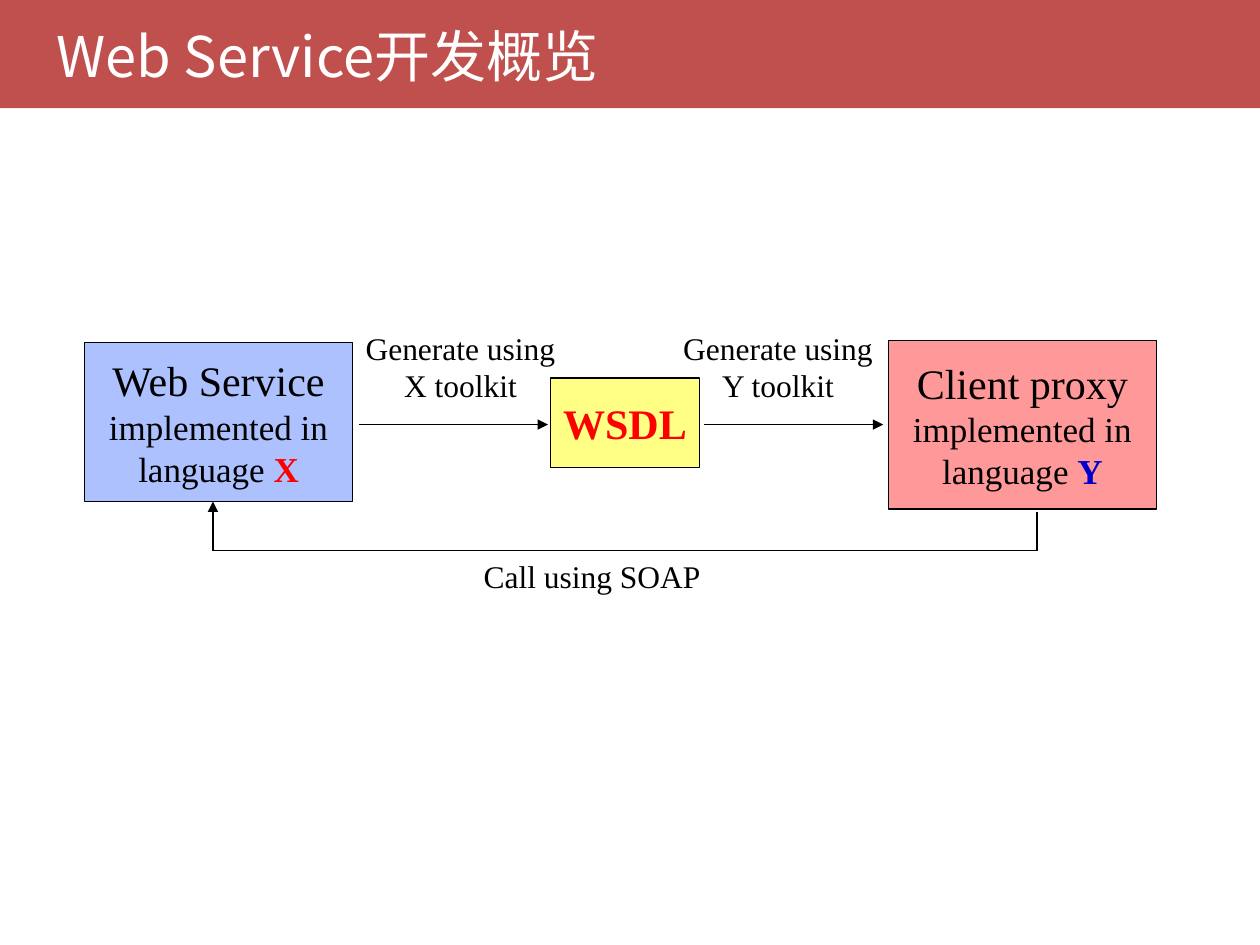
from lxml import etree
from pptx import Presentation
from pptx.dml.color import RGBColor
from pptx.enum.shapes import MSO_CONNECTOR, MSO_SHAPE
from pptx.enum.text import MSO_ANCHOR, PP_ALIGN
from pptx.oxml.ns import qn
from pptx.util import Inches, Pt

RECTANGLE, STRAIGHT = MSO_SHAPE.RECTANGLE, MSO_CONNECTOR.STRAIGHT
MIDDLE, TOP = MSO_ANCHOR.MIDDLE, MSO_ANCHOR.TOP
LEFT, CENTER = PP_ALIGN.LEFT, PP_ALIGN.CENTER
WIDTH, HEIGHT, HEADER_HEIGHT = 10, 7.5, 0.86
TITLE_FONT, BODY_FONT = "Noto Sans CJK SC", "Times New Roman"
BLACK, WHITE, RED, BLUE, HEADER_RED = "000000", "FFFFFF", "FF0000", "0000CC", "C0504D"

# Content: a run is (text, size, colour, bold)
TITLE = [[("Web Service开发概览", 32, WHITE, False)]]


def component(name, language, colour):
    return [[(name, 24, BLACK, False)],
            [("implemented in", 20, BLACK, False)],
            [("language ", 20, BLACK, False), (language, 20, colour, True)]]


# (left, top, width, height), fill, opacity in percent, paragraphs
BOXES = [
    ((0.67, 2.72, 2.13, 1.26), "3366FF", 40, component("Web Service", "X", RED)),
    ((4.37, 3, 1.18, 0.71), "FFFF00", 48, [[("WSDL", 24, RED, True)]]),
    ((7.05, 2.7, 2.13, 1.34), "FF0000", 40, component("Client proxy", "Y", BLUE)),
]
LABELS = [
    ((3.74, 4.37, 2.76, 0.4), "Call using SOAP", LEFT),
    ((2.79, 2.56, 1.73, 0.7), "Generate using X toolkit", CENTER),
    ((5.23, 2.56, 1.89, 0.7), "Generate using Y toolkit", CENTER),
]

# Connections: start, end, arrowhead
FLOW_Y, RETURN_Y = 3.37, 4.37
SERVICE_X, PROXY_X = 1.69, 8.23
CONNECTIONS = [
    ((PROXY_X, 4.06), (PROXY_X, RETURN_Y), False),
    ((SERVICE_X, RETURN_Y), (PROXY_X, RETURN_Y), False),
    ((SERVICE_X, RETURN_Y), (SERVICE_X, 3.98), True),
    ((2.85, FLOW_Y), (4.35, FLOW_Y), True),
    ((5.59, FLOW_Y), (7.01, FLOW_Y), True),
]


def rgb(colour):
    return RGBColor.from_string(colour)


def inches(lengths):
    return [Inches(length) for length in lengths]


def write(shape, paragraphs, font_name, align, anchor, wrap=True):
    frame = shape.text_frame
    frame.word_wrap = wrap
    frame.vertical_anchor = anchor
    frame.text = "\n".join("" for _ in paragraphs)
    for paragraph, runs in zip(frame.paragraphs, paragraphs):
        paragraph.alignment = align
        for text, size, colour, bold in runs:
            run = paragraph.add_run()
            run.text = text
            run.font.name, run.font.size, run.font.bold = font_name, Pt(size), bold
            run.font.color.rgb = rgb(colour)
            east_asian = etree.SubElement(run.font._element, qn("a:ea"))
            east_asian.set("typeface", font_name)


def add_box(slide, place, fill, opacity=100):
    box = slide.shapes.add_shape(RECTANGLE, *inches(place))
    box.shadow.inherit = False
    box.fill.solid()
    box.fill.fore_color.rgb = rgb(fill)
    if opacity < 100:
        colour = box._element.spPr.find(".//" + qn("a:srgbClr"))
        etree.SubElement(colour, qn("a:alpha")).set("val", str(opacity * 1000))
    return box


def add_connection(slide, start, end, arrowhead):
    connection = slide.shapes.add_connector(STRAIGHT, *inches(start + end))
    connection.line.color.rgb = rgb(BLACK)
    connection.line.width = Pt(0.75)
    if arrowhead:
        line = connection.line._get_or_add_ln()
        etree.SubElement(line, qn("a:tailEnd")).set("type", "triangle")
    etree.SubElement(connection._element.spPr, qn("a:effectLst"))


def main():
    deck = Presentation()
    deck.slide_width, deck.slide_height = inches((WIDTH, HEIGHT))
    slide = deck.slides.add_slide(deck.slide_layouts[6])

    # Header band and title
    header = add_box(slide, (0, 0, WIDTH, HEADER_HEIGHT), HEADER_RED)
    header.line.fill.background()
    title = slide.shapes.add_textbox(*inches((0.35, 0.02, 8.68, 0.84)))
    write(title, TITLE, TITLE_FONT, LEFT, MIDDLE)

    # Components
    for place, fill, opacity, paragraphs in BOXES:
        box = add_box(slide, place, fill, opacity)
        box.line.color.rgb = rgb(BLACK)
        box.line.width = Pt(0.75)
        write(box, paragraphs, BODY_FONT, CENTER, MIDDLE, wrap=False)

    # Labels
    for place, text, align in LABELS:
        label = slide.shapes.add_textbox(*inches(place))
        write(label, [[(text, 18, BLACK, False)]], BODY_FONT, align, TOP)

    # Connections
    for start, end, arrowhead in CONNECTIONS:
        add_connection(slide, start, end, arrowhead)

    deck.save("out.pptx")


if __name__ == "__main__":
    main()
